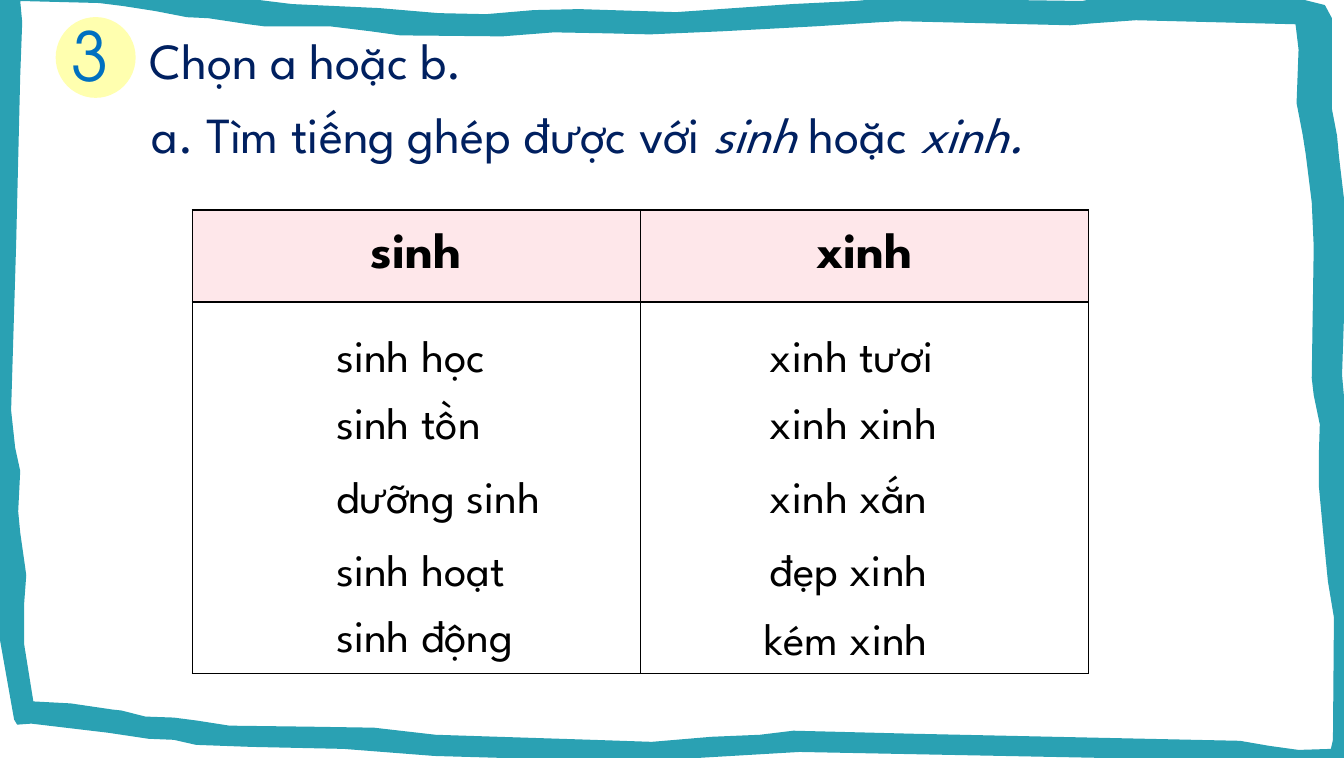
from pptx import Presentation
from pptx.dml.color import RGBColor
from pptx.enum.shapes import MSO_SHAPE as Kind
from pptx.enum.text import MSO_ANCHOR as Anchor, MSO_AUTO_SIZE as Auto, PP_ALIGN as Align
from pptx.oxml import parse_xml
from pptx.util import Cm, Pt

FONT = "League Spartan"
NAVY, BLACK = "002060", "000000"
OUTER = [
    (0.17, 7.17), (0.14, 7.12), (-0.02, 6.22), (-0.02, 5.61), (-0.05, 5.4),
    (-0.13, 4.92), (-0.2, 4.34), (-0.23, 4.15), (-0.19, 1.98), (-0.16, 0.42),
    (-0.12, 0.21), (-0.06, -0.17), (0.08, -0.26), (0.3, -0.25), (0.74, -0.2),
    (1.34, -0.16), (1.93, -0.06), (2.4, -0.02), (2.89, 0.04), (3.75, 0.08),
    (4.34, 0.13), (4.81, 0.14), (5.28, 0.1), (5.73, 0.09), (6.69, 0.12),
    (7.84, 0.04), (8.46, 0.01), (8.8, -0.02), (9.29, -0.01), (10.71, 0.01),
    (10.95, -0.04), (11.3, -0.03), (12.91, 0), (13.11, 0.05), (13.18, 0.18),
    (13.18, 0.8), (13.18, 1.08), (13.23, 1.34), (13.25, 1.55), (13.3, 1.97),
    (13.33, 2.2), (13.28, 3.71), (13.3, 3.93), (13.35, 4.28), (13.33, 5),
    (13.35, 5.15), (13.4, 5.4), (13.4, 5.65), (13.42, 5.77), (13.48, 6.2),
    (13.47, 6.69), (13.45, 7.35), (13.37, 7.53), (13.11, 7.59), (12.7, 7.59),
    (12.38, 7.54), (11.96, 7.52), (9.94, 7.48), (7.91, 7.44), (7.06, 7.49),
    (6.4, 7.53), (5.7, 7.52), (4.3, 7.48), (3.4, 7.41), (2.49, 7.39),
    (1.94, 7.37), (1.72, 7.32), (1.47, 7.31), (1.07, 7.25), (0.31, 7.16),
]
INNER = [
    (0.33, 6.94), (0.7, 6.96), (1.11, 7.02), (1.2, 7.03), (1.44, 7.09),
    (1.72, 7.1), (1.95, 7.13), (2.27, 7.18), (3.07, 7.19), (3.7, 7.2),
    (4.31, 7.27), (5.86, 7.32), (6.45, 7.34), (7.04, 7.29), (7.52, 7.27),
    (7.85, 7.23), (8.26, 7.24), (9.03, 7.26), (12.27, 7.33), (12.56, 7.38),
    (12.85, 7.42), (13.17, 7.41), (13.19, 7.32), (13.2, 6.11), (13.14, 5.75),
    (13.1, 5.34), (13.05, 4.8), (13.05, 4.52), (13.06, 4.2), (13, 3.91),
    (12.98, 3.74), (13, 2.44), (12.98, 2), (12.92, 1.52), (12.89, 1.33),
    (12.83, 1.02), (12.85, 0.49), (12.82, 0.24), (11.24, 0.2), (10.82, 0.23),
    (10.59, 0.25), (8.9, 0.21), (8.7, 0.22), (8.08, 0.26), (7.14, 0.31),
    (6.43, 0.34), (6.01, 0.33), (5.48, 0.32), (4.97, 0.36), (3.96, 0.35),
    (3.67, 0.31), (3.26, 0.26), (2.61, 0.26), (2.46, 0.24), (2.06, 0.18),
    (1.85, 0.17), (1.54, 0.11), (1.22, 0.06), (0.98, 0.03), (0.2, 0.01),
    (0.22, 0.22), (0.2, 0.75), (0.16, 2.41), (0.11, 4.06), (0.15, 4.43),
    (0.2, 4.66), (0.18, 5.06), (0.2, 5.27), (0.26, 5.69), (0.24, 5.96),
    (0.24, 6.38),
]
HEADS = ["sinh", "xinh"]
TOPS = [7.44, 9.12, 10.97, 12.8, 14.48]
WORDS = [
    (8.2, ["sinh học", "sinh tồn", "dưỡng sinh", "sinh hoạt", "sinh động"]),
    (19.1, ["xinh tươi", "xinh xinh", "xinh xắn", "đẹp xinh"]),
]
LAST = (18.97, 14.55, "kém xinh")
TASK = [("a. Tìm tiếng ghép được với ", False), ("sinh ", True),
        ("hoặc ", False), ("xinh.", True)]


def tint(code):
    return RGBColor.from_string(code)


def fill(part, code):
    part.fill.solid()
    part.fill.fore_color.rgb = tint(code)


def paint(shape, code):
    fill(shape, code)
    shape.line.fill.background()
    shape.shadow.inherit = False


def write(para, text, size, code, name=FONT, **look):
    run = para.add_run()
    run.text = text
    for key, value in dict(size=Pt(size), name=name, **look).items():
        setattr(run.font, key, value)
    run.font.color.rgb = tint(code)


def box(slide, spot, **look):
    frame = slide.shapes.add_textbox(*map(Cm, spot)).text_frame
    base = dict(word_wrap=True, auto_size=Auto.SHAPE_TO_FIT_TEXT)
    for key, value in {**base, **look}.items():
        setattr(frame, key, value)
    para = frame.paragraphs[0]
    para.alignment = Align.JUSTIFY
    return para


def word(slide, left, top, text):
    para = box(slide, (left, top, 6.2, 2.03))
    for key, value in dict(line_spacing=1.5, space_before=Pt(12), space_after=Pt(12)).items():
        setattr(para, key, value)
    write(para, text, 32, BLACK)


def edge(cell):
    props = cell._tc.get_or_add_tcPr()
    for spot, side in enumerate("LRTB"):
        props.insert(spot, parse_xml(
            f'<a:ln{side} xmlns:a="http://schemas.openxmlformats.org/drawingml/2006/main" '
            f'w="12700"><a:solidFill><a:srgbClr val="{BLACK}"/></a:solidFill></a:ln{side}>'))


def border(slide):
    outer, inner = ([(round(x * 100), round(y * 100)) for x, y in ring]
                    for ring in (OUTER, INNER))
    draft = slide.shapes.build_freeform(*outer[0], scale=Cm(2.54) / 100)
    draft.add_line_segments(outer[1:], close=True)
    draft.move_to(*inner[0])
    draft.add_line_segments(inner[1:], close=True)
    paint(draft.convert_to_shape(), "2AA1B3")


def grid(slide):
    table = slide.shapes.add_table(2, 2, Cm(4.83), Cm(5.28), Cm(22.52), Cm(11.64)).table
    table.first_row = table.horz_banding = False
    for row, high in zip(table.rows, (2.31, 9.33)):
        row.height = Cm(high)
    for spot, text in enumerate(HEADS):
        head, body = table.cell(0, spot), table.cell(1, spot)
        fill(head, "FEE7EA")
        body.fill.background()
        edge(head)
        edge(body)
        head.vertical_anchor = Anchor.MIDDLE
        para = head.text_frame.paragraphs[0]
        para.alignment = Align.CENTER
        write(para, text, 36, BLACK, bold=True)


def main():
    deck = Presentation()
    deck.slide_width, deck.slide_height = Cm(33.78), Cm(19.05)
    slide = deck.slides.add_slide(deck.slide_layouts[6])
    border(slide)
    disc = slide.shapes.add_shape(Kind.OVAL, *map(Cm, (1.4, 0.43, 2.01, 2.03)))
    paint(disc, "FFFFAF")
    pad = {f"margin_{side}": Cm(0.33) for side in ("left", "right", "top", "bottom")}
    mark = box(slide, (1.47, 0.71, 2.03, 1.32), auto_size=Auto.NONE,
               vertical_anchor=Anchor.MIDDLE, **pad)
    write(mark, "3", 48, "0070C0", "TeX Gyre Adventor")
    write(box(slide, (3.51, 0.61, 28.4, 1.8)), "Chọn a hoặc b.", 36, NAVY)
    task = box(slide, (3.56, 2.46, 26.85, 1.8))
    for text, slant in TASK:
        write(task, text, 36, NAVY, italic=slant)
    grid(slide)
    for left, words in WORDS:
        for top, text in zip(TOPS, words):
            word(slide, left, top, text)
    word(slide, *LAST)
    deck.save("out.pptx")


if __name__ == "__main__":
    main()
